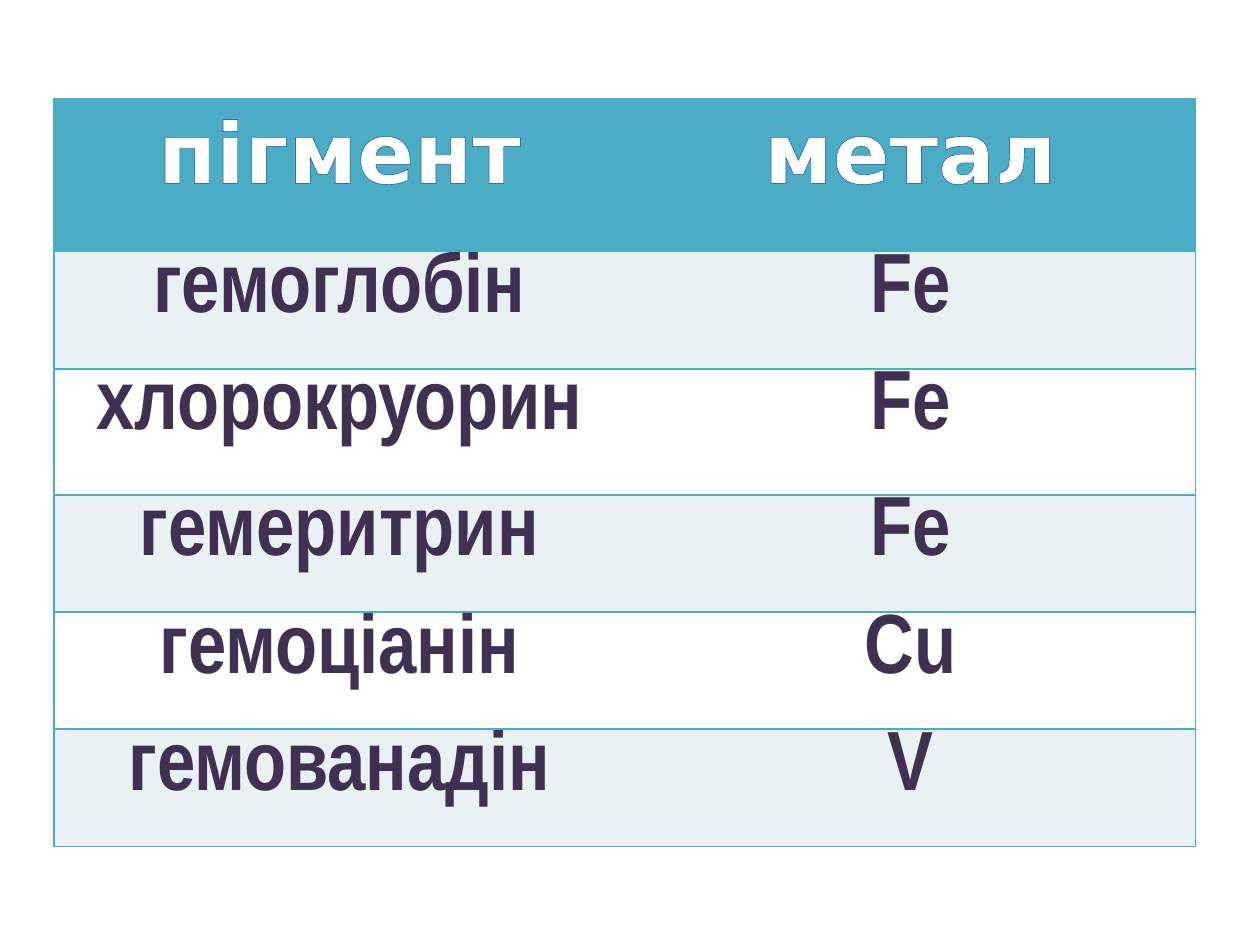
from lxml import etree
from pptx import Presentation, util as u
from pptx.dml.color import RGBColor
from pptx.enum import text
from pptx.oxml import ns

HUES = {"teal": "4BACC6", "pale": "E9F1F5", "white": "FFFFFF",
        "plum": "403152", "navy": "054697"}
ROWS = [("пігмент", "метал"), ("гемоглобін", "Fe"), ("хлорокруорин", "Fe"),
        ("гемеритрин", "Fe"), ("гемоціанін", "Cu"), ("гемованадін", "V")]
HIGH = [1.21, 0.93, 1, 0.93, 0.93, 0.93]


class Deck:
    """Holds the style and the current slide."""

    def __init__(self, wide, high):
        self.prs = Presentation()
        self.prs.slide_width, self.prs.slide_height = u.Inches(wide), u.Inches(high)
        self.wide, self.high = wide, high
        self.slide = self.prs.slides.add_slide(self.prs.slide_layouts[6])

    def line(self, host, tag, hue=None):
        ln = etree.SubElement(host, ns.qn("a:" + tag), w=str(u.Pt(1)))
        if hue:
            fill = etree.SubElement(ln, ns.qn("a:solidFill"))
            etree.SubElement(fill, ns.qn("a:srgbClr"), val=HUES[hue])
        else:
            etree.SubElement(ln, ns.qn("a:noFill"))

    def cell(self, cell, words, fill, hue, face, edges, pad=0, rim=None):
        props = cell._tc.get_or_add_tcPr()
        for side in "LRTB":
            self.line(props, "ln" + side, "teal" if side in edges else None)
        cell.fill.solid()
        cell.fill.fore_color.rgb = RGBColor.from_string(HUES[fill])
        cell.margin_top = cell.margin_bottom = u.Inches(pad)
        par = cell.text_frame.paragraphs[0]
        par.alignment = text.PP_ALIGN.CENTER
        run = par.add_run()
        run.text = words
        if rim:
            self.line(run._r.get_or_add_rPr(), "ln", rim)
        font = par.font
        font.name, font.size, font.bold = face, u.Pt(48), True
        font.color.rgb = RGBColor.from_string(HUES[hue])

    def table(self, left, top, wide, rows, highs):
        spots = [u.Inches(n) for n in
                 (left * self.wide, top * self.high, wide * self.wide, sum(highs))]
        grid = self.slide.shapes.add_table(len(rows), len(rows[0]), *spots).table
        for r, (row, high) in enumerate(zip(rows, highs)):
            grid.rows[r].height = u.Inches(high)
            for c, words in enumerate(row):
                edges = "TB" + "LR"[c]
                if r == 0:
                    self.cell(grid.cell(r, c), words, "teal", "white",
                              "DejaVu Sans", edges, 0.05, "navy")
                else:
                    self.cell(grid.cell(r, c), words, "pale" if r % 2 else "white",
                              "plum", "Arial Narrow", edges)

    def save(self):
        self.prs.save("out.pptx")


if __name__ == "__main__":
    deck = Deck(10, 7.5)
    deck.table(0.043, 0.105, 0.906, ROWS, HIGH)
    deck.save()
